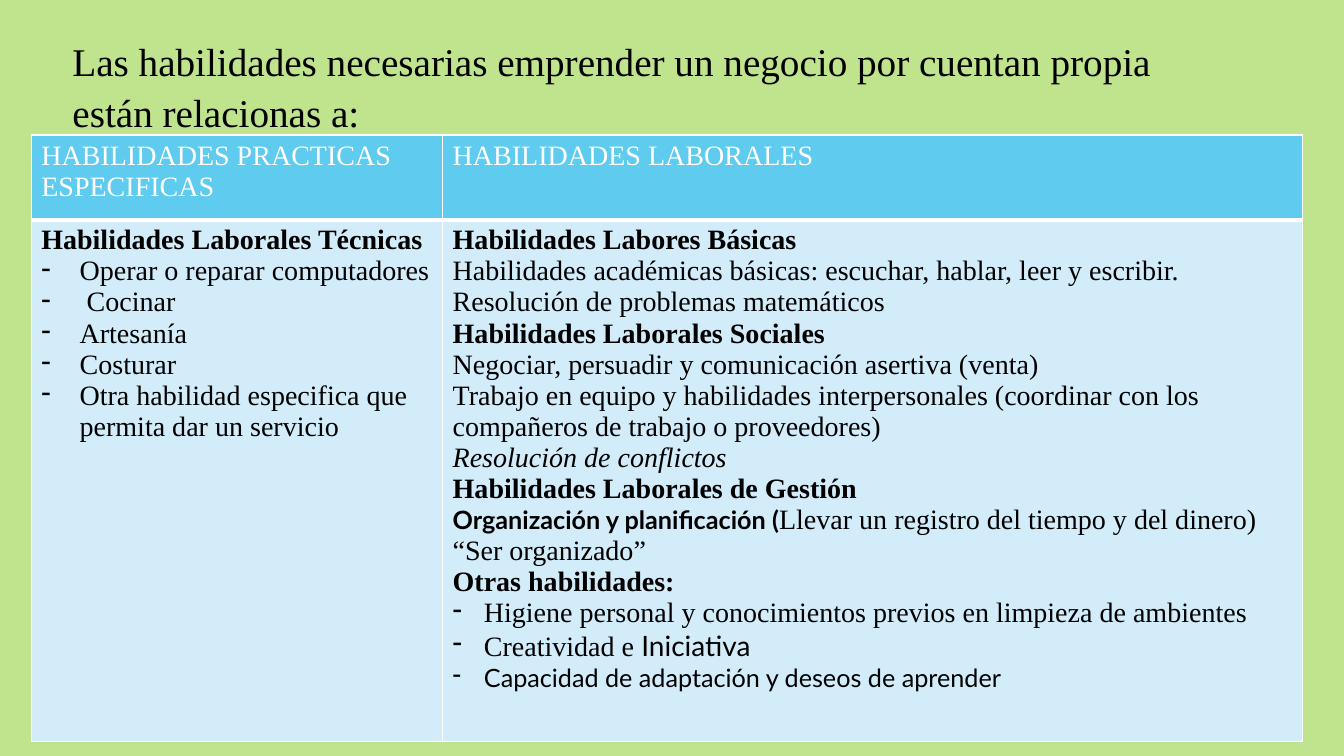
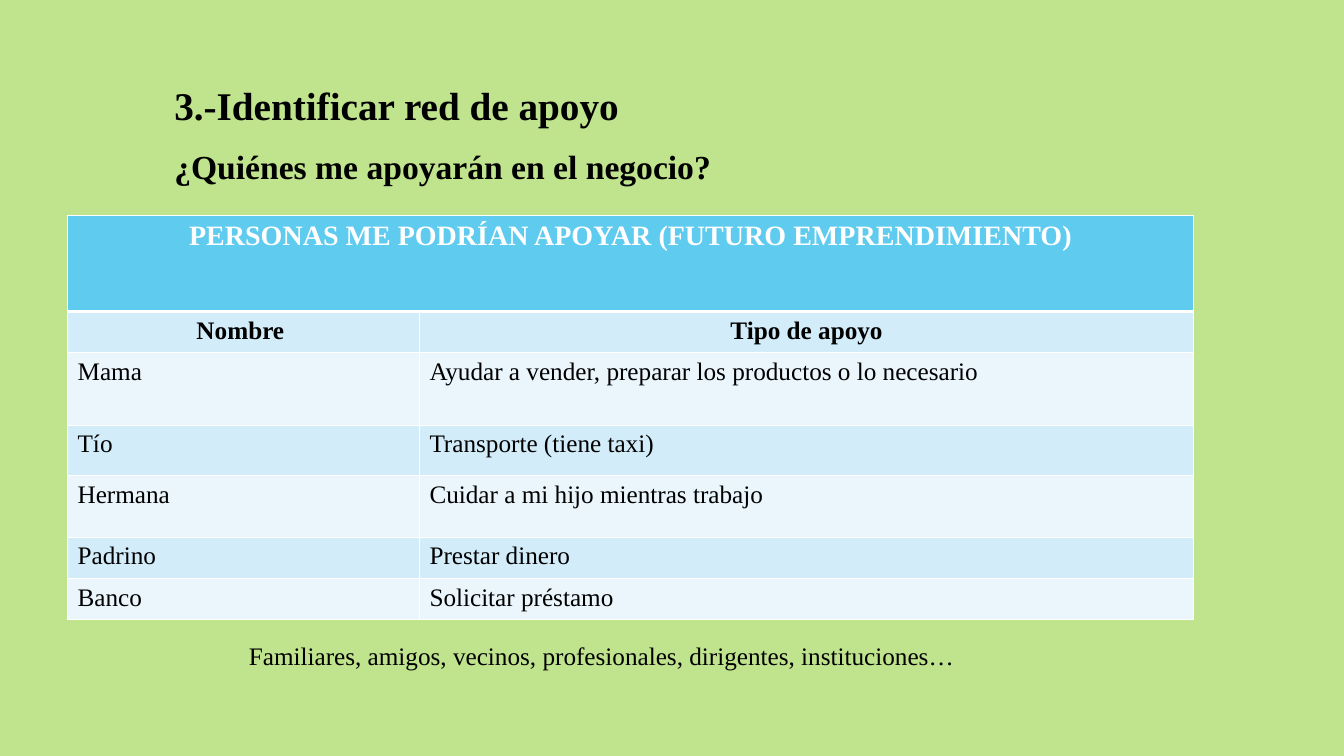
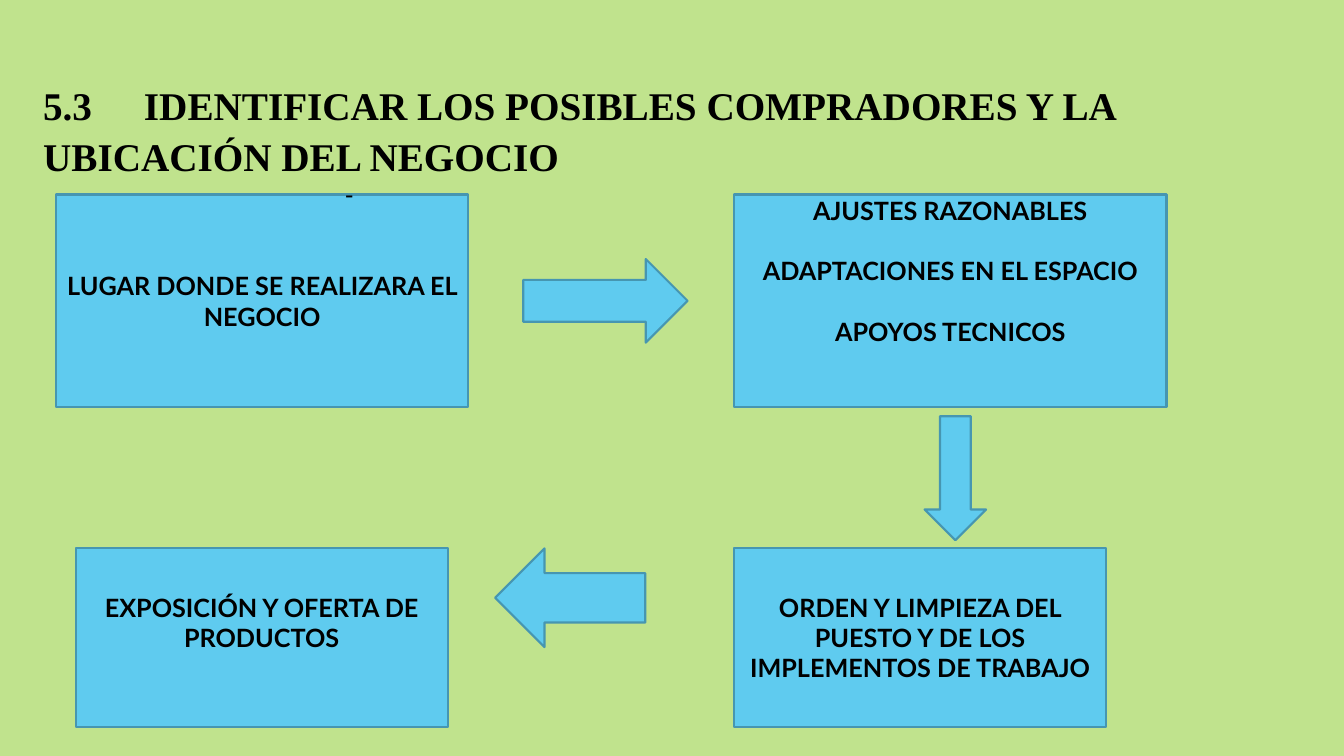
from dataclasses import dataclass
from typing import NamedTuple

from pptx import Presentation, util as u
from pptx.dml.color import RGBColor
from pptx.enum import shapes, text
from pptx.oxml.xmlchemy import OxmlElement

EMU_PER_PX = 9144  # 100 px to the inch
SERIF, SANS = "Times New Roman", "Lato"
BACKGROUND, ACCENT, OUTLINE = "C0E38D", "5FCBEF", "4696B1"
BAND_DARK, BAND_LIGHT = "D2ECF9", "EAF6FC"
BLACK, WHITE = "000000", "FFFFFF"
LEFT, CENTER = text.PP_ALIGN.LEFT, text.PP_ALIGN.CENTER


class Box(NamedTuple):
    left: int
    top: int
    width: int
    height: int


@dataclass
class Span:
    text: str
    size: int = 20
    bold: bool = False
    italic: bool = False
    font: str = SERIF
    color: str = BLACK


@dataclass
class Para:
    spans: list[Span]
    align: text.PP_ALIGN = LEFT
    hang: int = 0  # hanging indent of a dash bullet
    before: float = 0
    leading: float = 1.0


@dataclass
class Step:
    box: Box
    lines: list[str]
    bottom_pad: int = 0


@dataclass
class Arrow:
    box: Box
    rotation: int = 0


def px(length: int) -> u.Emu:
    return u.Emu(length * EMU_PER_PX)


def place(box: Box) -> list[u.Emu]:
    return [px(length) for length in box]


def rgb(color: str) -> RGBColor:
    return RGBColor.from_string(color)


def paint(target, color: str) -> None:
    target.fill.solid()
    target.fill.fore_color.rgb = rgb(color)


def line(words: str, align: text.PP_ALIGN = LEFT, **style) -> Para:
    return Para([Span(words, **style)], align)


def dash(hang: int, *spans: Span) -> Para:
    return Para(list(spans), hang=hang)


def title(words: str, size: int = 28, bold: bool = True, before: float = 0) -> Para:
    return Para([Span(words, size, bold)], before=before, leading=1.07)


def write(frame, paras: list[Para]) -> None:
    frame.word_wrap = True
    for index, spec in enumerate(paras):
        para = frame.add_paragraph() if index else frame.paragraphs[0]
        para.alignment = spec.align
        para.line_spacing = spec.leading
        para.space_before = u.Pt(spec.before)
        if spec.hang:
            properties = para._p.get_or_add_pPr()
            properties.set("marL", str(px(spec.hang)))
            properties.set("indent", str(-px(spec.hang)))
            bullet = OxmlElement("a:buChar")
            bullet.set("char", "-")
            properties.append(bullet)
        for span in spec.spans:
            run = para.add_run()
            run.text = span.text
            run.font.size = u.Pt(span.size)
            run.font.name = span.font
            run.font.bold = span.bold
            run.font.italic = span.italic
            run.font.color.rgb = rgb(span.color)


def add_text(page, box: Box, paras: list[Para]) -> None:
    write(page.shapes.add_textbox(*place(box)).text_frame, paras)


def add_borders(cell, bottom: int) -> None:
    properties = cell._tc.get_or_add_tcPr()
    for side, points in (("L", 1), ("R", 1), ("T", 1), ("B", bottom)):
        border = OxmlElement(f"a:ln{side}")
        border.set("w", str(u.Pt(points)))
        fill = OxmlElement("a:solidFill")
        color = OxmlElement("a:srgbClr")
        color.set("val", WHITE)
        fill.append(color)
        border.append(fill)
        properties.append(border)


def add_table(page, left: int, top: int, columns: list[int], heights: list[int],
              rows: list[list[list[Para]]]) -> None:
    """Draw a header row and banded rows; a short row spans the whole width."""
    box = Box(left, top, sum(columns), sum(heights))
    table = page.shapes.add_table(len(heights), len(columns), *place(box)).table
    for column, width in zip(table.columns, columns):
        column.width = px(width)
    for index, (row, height, contents) in enumerate(zip(table.rows, heights, rows)):
        row.height = px(height)
        band = BAND_DARK if index % 2 else BAND_LIGHT
        for cell in row.cells:
            add_borders(cell, bottom=1 if index else 3)
            paint(cell, band if index else ACCENT)
        if len(contents) < len(columns):
            table.cell(index, 0).merge(table.cell(index, len(columns) - 1))
        for cell, paras in zip(row.cells, contents):
            write(cell.text_frame, paras)


def add_block(page, kind: shapes.MSO_SHAPE, box: Box):
    block = page.shapes.add_shape(kind, *place(box))
    block.shadow.inherit = False
    paint(block, ACCENT)
    block.line.color.rgb = rgb(OUTLINE)
    block.line.width = u.Pt(1.5)
    return block


def add_step(page, step: Step) -> None:
    frame = add_block(page, shapes.MSO_SHAPE.RECTANGLE, step.box).text_frame
    frame.vertical_anchor = text.MSO_ANCHOR.MIDDLE
    frame.margin_top = 0
    frame.margin_bottom = px(step.bottom_pad)
    paras = [line(words, CENTER, size=18, bold=True, font=SANS) for words in step.lines]
    for para in paras[1:]:
        para.before = 21.6
    write(frame, paras)


def add_arrow(page, arrow: Arrow) -> None:
    add_block(page, shapes.MSO_SHAPE.RIGHT_ARROW, arrow.box).rotation = arrow.rotation


def build_skills(page) -> None:
    headers = ["HABILIDADES PRACTICAS ESPECIFICAS", "HABILIDADES LABORALES"]
    trades = ["Operar o reparar computadores", " Cocinar", "Artesanía", "Costurar",
              "Otra habilidad especifica que permita dar un servicio"]
    technical = [line("Habilidades Laborales Técnicas", bold=True)]
    technical += [dash(38, Span(trade)) for trade in trades]
    work = [
        line("Habilidades Labores Básicas", bold=True),
        line("Habilidades académicas básicas: escuchar, hablar, leer y escribir. "
             "Resolución de problemas matemáticos"),
        line("Habilidades Laborales Sociales", bold=True),
        line("Negociar, persuadir y comunicación asertiva (venta)"),
        line("Trabajo en equipo y habilidades interpersonales (coordinar con los "
             "compañeros de trabajo o proveedores)"),
        line("Resolución de conflictos", italic=True),
        line("Habilidades Laborales de Gestión", bold=True),
        Para([Span("Organización y planificación (", 18, bold=True, font=SANS),
              Span("Llevar un registro del tiempo y del dinero) “Ser organizado”")]),
        line("Otras habilidades:", bold=True),
        dash(31, Span("Higiene personal y conocimientos previos en limpieza de ambientes")),
        dash(31, Span("Creatividad e "), Span("Iniciativa", font=SANS)),
        dash(31, Span("Capacidad de adaptación y deseos de aprender", 18, font=SANS)),
    ]
    add_table(page, 31, 134, [408, 853], [84, 518],
              [[[line(header, color=WHITE)] for header in headers], [technical, work]])
    add_text(page, Box(62, 29, 1135, 104), [
        title("Las habilidades necesarias emprender un negocio por cuentan propia "
              "están relacionas a:", bold=False)])


def build_support(page) -> None:
    add_text(page, Box(163, 73, 1082, 120), [
        title("3.-Identificar red de apoyo"),
        title("¿Quiénes me apoyarán en el negocio?", size=24, before=10)])
    supporters = [
        ("Mama", "Ayudar a vender, preparar los productos o lo necesario"),
        ("Tío", "Transporte (tiene taxi)"),
        ("Hermana", "Cuidar a mi hijo mientras trabajo"),
        ("Padrino", "Prestar dinero"),
        ("Banco", "Solicitar préstamo"),
    ]
    heading = line("PERSONAS ME PODRÍAN APOYAR (FUTURO EMPRENDIMIENTO)", CENTER,
                   bold=True, color=WHITE)
    labels = [[line(label, CENTER, size=18, bold=True)]
              for label in ("Nombre ", "Tipo de apoyo")]
    people = [[[line(words, size=18)] for words in supporter] for supporter in supporters]
    add_table(page, 67, 214, [349, 768], [95, 41, 72, 50, 61, 41, 41],
              [[[heading]], labels, *people])
    add_text(page, Box(237, 630, 992, 40), [
        line("Familiares, amigos, vecinos, profesionales, dirigentes, instituciones…",
             size=18)])


def build_location(page) -> None:
    add_text(page, Box(33, 73, 1163, 110), [
        title("5.3 \tIDENTIFICAR LOS POSIBLES COMPRADORES Y LA UBICACIÓN DEL NEGOCIO")])
    steps = [
        Step(Box(56, 193, 408, 211), ["LUGAR DONDE SE REALIZARA EL NEGOCIO"]),
        Step(Box(728, 193, 429, 211),
             ["AJUSTES RAZONABLES", "ADAPTACIONES EN EL ESPACIO", "APOYOS TECNICOS"],
             bottom_pad=60),
        Step(Box(728, 544, 369, 177),
             ["ORDEN Y LIMPIEZA DEL PUESTO Y DE LOS IMPLEMENTOS DE TRABAJO"]),
        Step(Box(75, 544, 369, 177), ["EXPOSICIÓN Y OFERTA DE PRODUCTOS"],
             bottom_pad=30),
    ]
    arrows = [
        Arrow(Box(519, 257, 163, 83)),
        Arrow(Box(886, 444, 123, 61), rotation=90),
        Arrow(Box(491, 544, 149, 98), rotation=180),
    ]
    for step in steps:
        add_step(page, step)
    for arrow in arrows:
        add_arrow(page, arrow)
    add_text(page, Box(332, 173, 667, 40), [line("-", size=18, font=SANS)])


def main() -> None:
    deck = Presentation()
    deck.slide_width, deck.slide_height = px(1333), px(750)
    paint(deck.slide_master.background, BACKGROUND)
    for build in (build_skills, build_support, build_location):
        build(deck.slides.add_slide(deck.slide_layouts[6]))
    deck.save("out.pptx")


if __name__ == "__main__":
    main()
